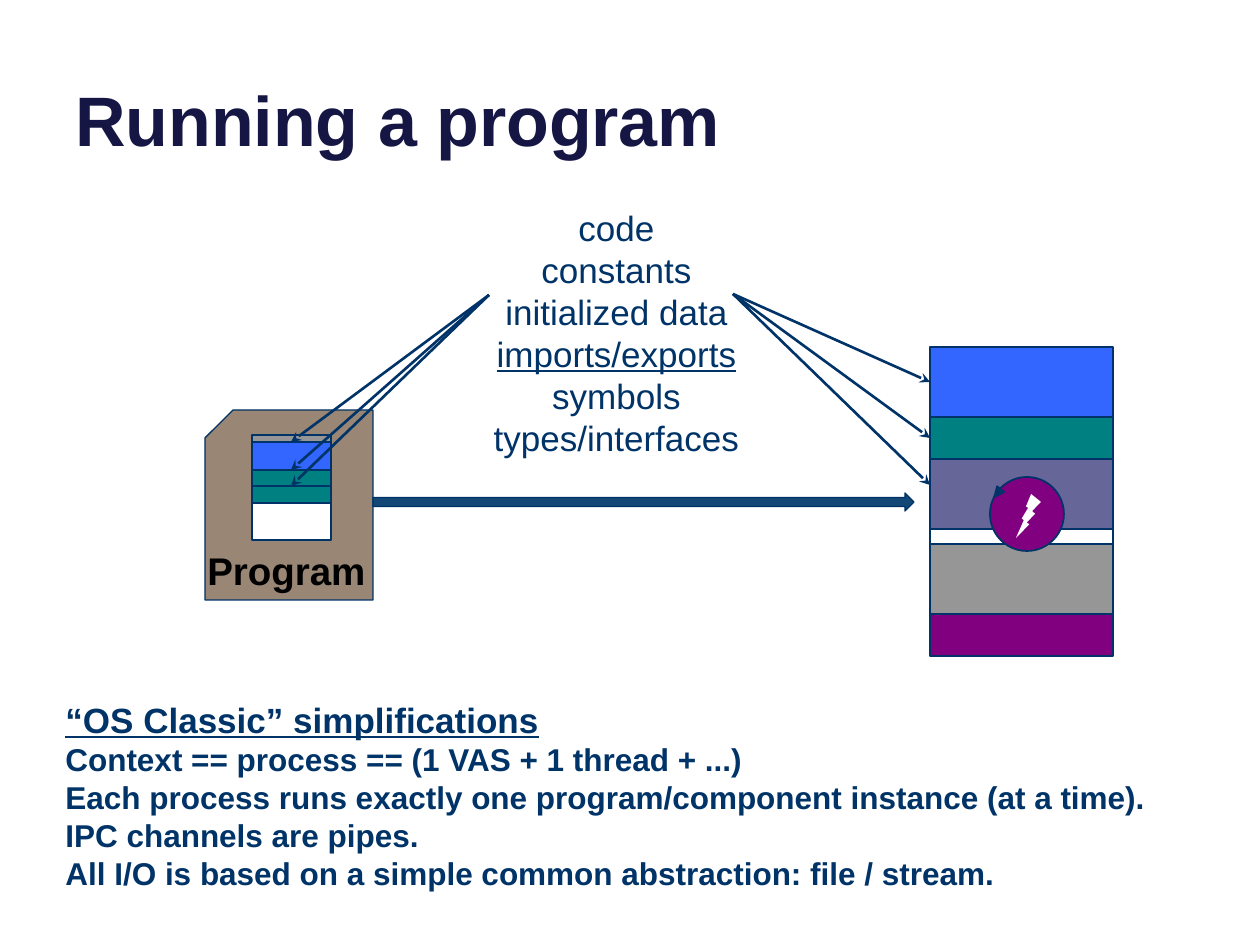
from lxml import etree
from pptx import Presentation, util as u
from pptx.dml.color import RGBColor
from pptx.enum import shapes, text
from pptx.oxml.ns import qn

EMU_PER_PX = 914400 / 126
NAVY = RGBColor(0x00, 0x33, 0x67)
TITLE = RGBColor(0x16, 0x16, 0x45)
BLACK = RGBColor(0x00, 0x00, 0x00)
WHITE = RGBColor(0xFF, 0xFF, 0xFF)
TAUPE = RGBColor(0x99, 0x86, 0x74)
STEEL = RGBColor(0x13, 0x47, 0x76)
BLUE = RGBColor(0x33, 0x66, 0xFF)
TEAL = RGBColor(0x00, 0x80, 0x80)
SLATE = RGBColor(0x66, 0x66, 0x99)
GRAY = RGBColor(0x96, 0x96, 0x96)
PURPLE = RGBColor(0x80, 0x00, 0x80)

MEMORY = [(70, BLUE), (42, TEAL), (70, SLATE), (15, WHITE), (70, GRAY), (42, PURPLE)]
FILE_SECTIONS = [(7, GRAY), (28, BLUE), (16, TEAL), (17, TEAL), (37, WHITE)]
CONTENTS = ["code", "constants", "initialized data", "imports/exports",
            "symbols", "types/interfaces"]
HEADING = "“OS Classic” simplifications"
NOTES = [
    "Context == process == (1 VAS + 1 thread + ...)",
    "Each process runs exactly one program/component instance (at a time).",
    "IPC channels are pipes.",
    "All I/O is based on a simple common abstraction: file / stream.",
]


def px(n):
    return u.Emu(round(n * EMU_PER_PX))


def add_text(s, box, lines, size, color=NAVY, bold=False, align=text.PP_ALIGN.LEFT,
             wrap=True, anchor=text.MSO_ANCHOR.TOP, grow=True, underlined=(), sizes=None):
    tf = s.add_textbox(*map(px, box)).text_frame
    tf.word_wrap = wrap
    tf.vertical_anchor = anchor
    tf.auto_size = (text.MSO_AUTO_SIZE.SHAPE_TO_FIT_TEXT if grow
                    else text.MSO_AUTO_SIZE.NONE)
    for i, line in enumerate(lines):
        p = tf.paragraphs[0] if i == 0 else tf.add_paragraph()
        p.alignment = align
        r = p.add_run()
        r.text = line
        r.font.name = "Arial"
        r.font.size = u.Pt((sizes or {}).get(line, size))
        r.font.bold = bold
        r.font.color.rgb = color
        r.font.underline = line in underlined


def add_shape(s, kind, box, fill, line=1, rotation=0, flip=False):
    sp = s.add_shape(kind, *map(px, box))
    sp.shadow.inherit = False
    sp.fill.solid()
    sp.fill.fore_color.rgb = fill
    if line:
        sp.line.color.rgb = NAVY
        sp.line.width = u.Pt(line)
    else:
        sp.line.fill.background()
    sp.rotation = rotation
    if flip:
        sp.element.spPr.xfrm.set("flipH", "1")


def add_stack(s, left, top, width, sections):
    for height, fill in sections:
        add_shape(s, shapes.MSO_SHAPE.FLOWCHART_PROCESS, (left, top, width, height), fill)
        top += height


def add_arrows(s, x, ys, origin):
    for y in ys:
        line = s.add_connector(shapes.MSO_CONNECTOR.STRAIGHT, *map(px, (x, y, *origin)))
        line.line.color.rgb = NAVY
        line.line.width = u.Pt(1.5)
        etree.SubElement(line.line._get_or_add_ln(), qn("a:headEnd"), type="stealth")
        etree.SubElement(line.element.spPr, qn("a:effectLst"))


def add_process(s):
    group = s.add_group_shape().shapes
    add_stack(group, 930, 347, 183, MEMORY)
    add_shape(group, shapes.MSO_SHAPE.OVAL, (990, 477, 74, 74), PURPLE)
    add_shape(group, shapes.MSO_SHAPE.LIGHTNING_BOLT, (1016, 494, 25, 44), WHITE,
              line=0, flip=True)
    add_shape(group, shapes.MSO_SHAPE.ISOSCELES_TRIANGLE, (993, 488, 9, 10), NAVY,
              rotation=219)


def main():
    prs = Presentation()
    prs.slide_width, prs.slide_height = px(1260), px(945)
    s = prs.slides.add_slide(prs.slide_layouts[6]).shapes

    add_shape(s, shapes.MSO_SHAPE.SNIP_1_RECTANGLE, (205, 410, 168, 190), TAUPE,
              line=0.75, flip=True)
    add_text(s, (195, 541, 253, 59), ["Program"], 22, color=BLACK, bold=True)
    add_shape(s, shapes.MSO_SHAPE.RIGHT_ARROW, (373, 493, 541, 18), STEEL, line=0.75)
    add_text(s, (63, -47, 1134, 214), ["Running a program"], 40, color=TITLE, bold=True,
             anchor=text.MSO_ANCHOR.BOTTOM, grow=False)
    add_text(s, (53, 692, 1166, 212), [HEADING, *NOTES], 18, bold=True,
             underlined=[HEADING], sizes={HEADING: 20})
    add_process(s)
    add_stack(s.add_group_shape().shapes, 252, 435, 79, FILE_SECTIONS)
    add_arrows(s, 291, (442, 470, 486), (489, 295))
    add_text(s, (480, 200, 273, 267), CONTENTS, 20, align=text.PP_ALIGN.CENTER,
             wrap=False, underlined=["imports/exports"])
    add_arrows(s, 930, (382, 438, 485), (733, 294))
    prs.save("out.pptx")


if __name__ == "__main__":
    main()
